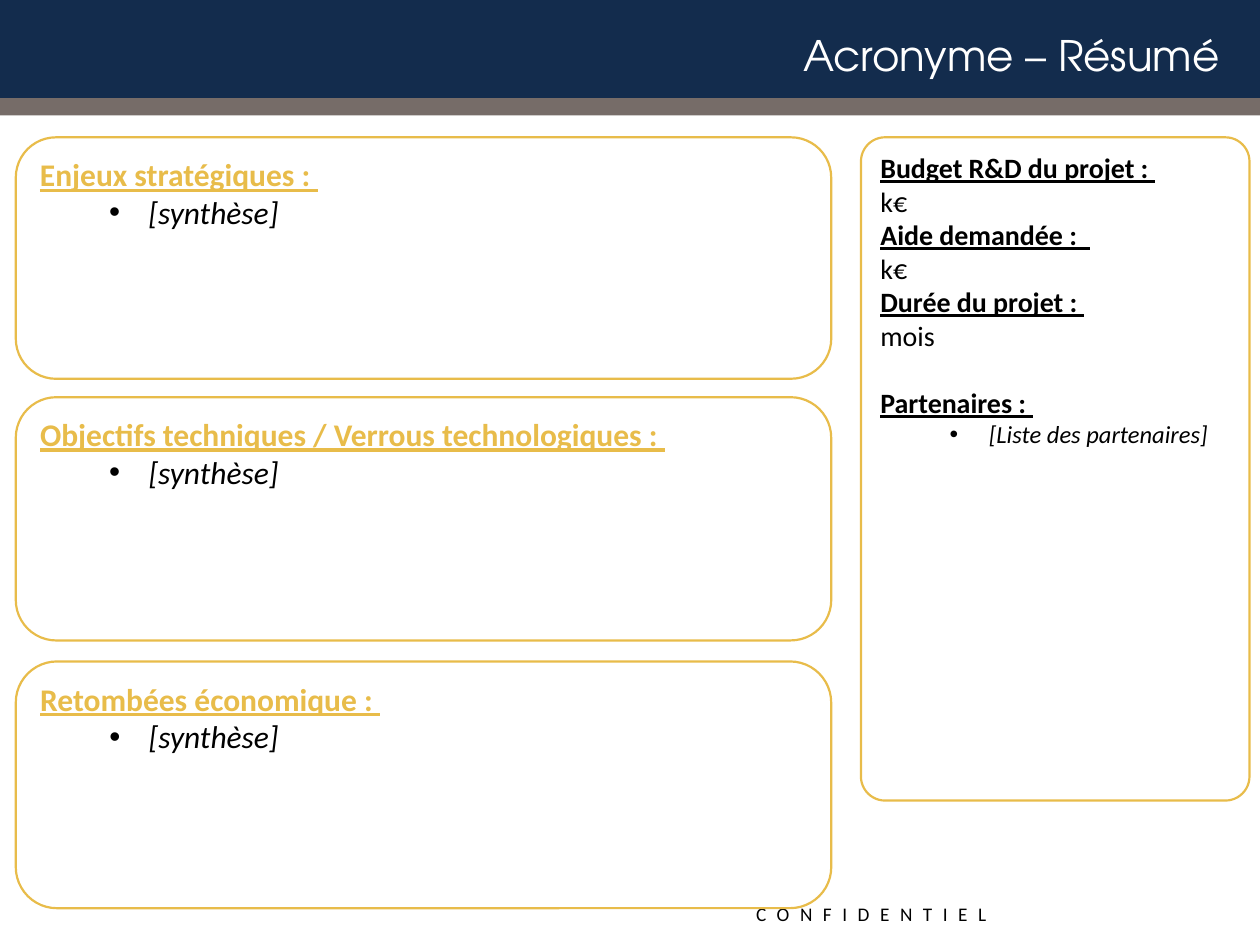
import pptx
import pptx.util
import pptx.dml.color
import pptx.enum.shapes
import pptx.enum.text
import pptx.oxml.ns
import lxml.etree

Pt = pptx.util.Pt
COLORS = {
    "navy": "132C4D",
    "taupe": "766C68",
    "gold": "E8BC4A",
    "white": "FFFFFF",
    "black": "000000",
}


def color_of(name):
    return pptx.dml.color.RGBColor.from_string(COLORS[name])


def write(para, text, size=16, color="black", font="Calibri", bold=False,
          italic=False, underline=False, spacing=None):
    span = para.add_run()
    span.text = text
    span.font.size = Pt(size)
    span.font.name = font
    span.font.bold = bold
    span.font.italic = italic
    span.font.underline = underline
    span.font.color.rgb = color_of(color)
    if spacing:
        span.font._element.set("spc", str(spacing * 100))


class SlideBuilder:
    line_width = 1.25
    bullet_margin = 62
    bullet_hang = 22.5

    def __init__(self, deck):
        self.page = deck.slides.add_slide(deck.slide_layouts[5])

    def shape(self, kind, left, top, width, height, fill):
        box = self.page.shapes.add_shape(
            kind, Pt(left), Pt(top), Pt(width), Pt(height))
        box.shadow.inherit = False
        box.fill.solid()
        box.fill.fore_color.rgb = color_of(fill)
        box.line.fill.background()
        return box

    def bar(self, top, height, fill):
        bar = self.shape(pptx.enum.shapes.MSO_SHAPE.RECTANGLE,
                         0, top, 720, height, fill)
        self.page.shapes.title._element.addprevious(bar._element)

    def title(self, text, left, top, width, height):
        box = self.page.shapes.title
        box.left, box.top = Pt(left), Pt(top)
        box.width, box.height = Pt(width), Pt(height)
        frame = box.text_frame
        frame.auto_size = pptx.enum.text.MSO_AUTO_SIZE.NONE
        frame.vertical_anchor = pptx.enum.text.MSO_ANCHOR.MIDDLE
        para = frame.paragraphs[0]
        para.alignment = pptx.enum.text.PP_ALIGN.RIGHT
        write(para, text, size=24, color="white", font="TeX Gyre Adventor")

    def label(self, text, left, top, width, height):
        box = self.page.shapes.add_textbox(
            Pt(left), Pt(top), Pt(width), Pt(height))
        box.text_frame.word_wrap = False
        write(box.text_frame.paragraphs[0], text, size=11, spacing=6)

    def card(self, left, top, width, height, corner=0.1667):
        box = self.shape(pptx.enum.shapes.MSO_SHAPE.ROUNDED_RECTANGLE,
                         left, top, width, height, "white")
        box.adjustments[0] = corner
        box.line.color.rgb = color_of("gold")
        box.line.width = Pt(self.line_width)
        box.text_frame.word_wrap = True
        box.text_frame.vertical_anchor = pptx.enum.text.MSO_ANCHOR.TOP
        return box.text_frame

    def paragraph(self, frame):
        para = frame.paragraphs[0]
        if para.runs:
            para = frame.add_paragraph()
        para.alignment = pptx.enum.text.PP_ALIGN.LEFT
        return para

    def heading(self, frame, text, value=None, **style):
        para = self.paragraph(frame)
        write(para, text, bold=True, underline=True, **style)
        if value:
            para.add_line_break()
            write(para, value, **style)
        return para

    def bullet(self, frame, text, size):
        para = self.paragraph(frame)
        para.level = 1
        properties = para._p.get_or_add_pPr()
        properties.set("marL", str(Pt(self.bullet_margin)))
        properties.set("indent", str(-Pt(self.bullet_hang)))
        for tag, key, value in (("a:buFont", "typeface", "Arial"),
                                ("a:buChar", "char", "•")):
            mark = lxml.etree.SubElement(properties, pptx.oxml.ns.qn(tag))
            mark.set(key, value)
        write(para, text, size=size, italic=True)


def main():
    deck = pptx.Presentation()
    deck.slide_width, deck.slide_height = Pt(720), Pt(540)
    builder = SlideBuilder(deck)

    builder.bar(0, 65, "navy")
    builder.bar(56, 10, "taupe")
    builder.title("Acronyme – Résumé", 11, 10, 693, 42)
    builder.label("CONFIDENTIEL", 425, 512, 153, 21)

    summary = builder.card(492, 78.5, 222, 379, corner=0.062)
    for text, value in (("Budget R&D du projet : ", "k€"),
                        ("Aide demandée :  ", "k€"),
                        ("Durée du projet : ", "mois")):
        builder.heading(summary, text, value)
    builder.heading(summary, "Partenaires : ").space_before = Pt(19)
    builder.bullet(summary, "[Liste des partenaires]", 14)

    for text, top, height in (
            ("Enjeux stratégiques : ", 78.5, 138),
            ("Objectifs techniques / Verrous technologiques : ", 227, 139),
            ("Retombées économique : ", 378, 141)):
        frame = builder.card(9, 0 + top, 466, height)
        builder.heading(frame, text, size=18, color="gold")
        builder.bullet(frame, "[synthèse]", 18)

    deck.save("out.pptx")


if __name__ == "__main__":
    main()
